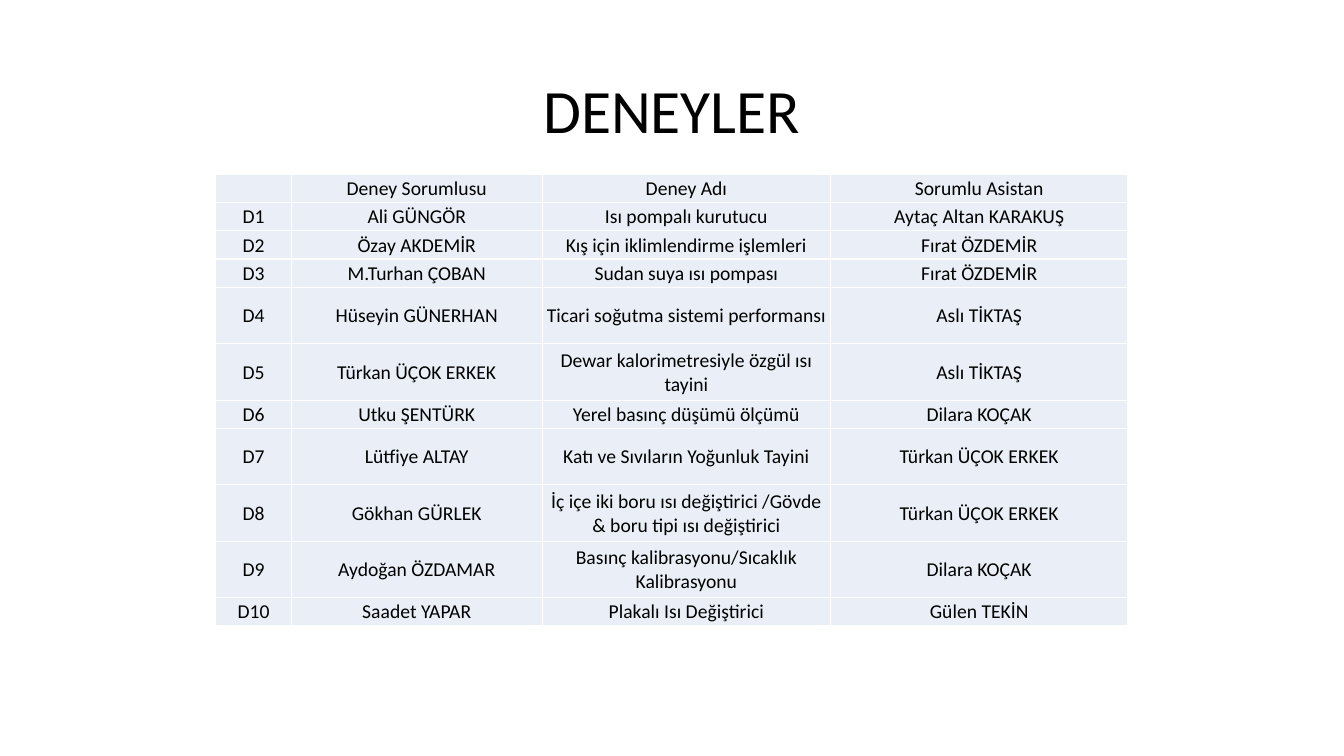
from lxml import etree
from pptx import Presentation
from pptx.dml.color import RGBColor
from pptx.enum.text import MSO_ANCHOR, PP_ALIGN
from pptx.oxml.ns import qn
from pptx.util import Pt

MIDDLE = MSO_ANCHOR.MIDDLE
CENTER = PP_ALIGN.CENTER
BLANK_LAYOUT = 6

THEME = {
    "font": "Calibri",
    "text": "000000",
    "cell": "EAEFF7",
    "border": "FFFFFF",
    "title_size": 44,
    "table_size": 14,
}

TABLE_LEFT, TABLE_TOP = 154.08, 124.56
COLUMN_WIDTHS = [54, 179.28, 205.92, 212.4]
LINE_HEIGHT = 20.16
CELL_FORMAT = {
    "margin_left": Pt(0.72),
    "margin_top": Pt(0.72),
    "margin_right": Pt(0.72),
    "margin_bottom": 0,
    "vertical_anchor": MIDDLE,
}

# Each row: height in lines, then the cell texts
EXPERIMENTS = [
    (1, "", "Deney Sorumlusu", "Deney Adı", "Sorumlu Asistan"),
    (1, "D1", "Ali GÜNGÖR", "Isı pompalı kurutucu", "Aytaç Altan KARAKUŞ"),
    (1, "D2", "Özay AKDEMİR", "Kış için iklimlendirme işlemleri", "Fırat ÖZDEMİR"),
    (1, "D3", "M.Turhan ÇOBAN", "Sudan suya ısı pompası", "Fırat ÖZDEMİR"),
    (2, "D4", "Hüseyin GÜNERHAN", "Ticari soğutma sistemi performansı", "Aslı TİKTAŞ"),
    (2, "D5", "Türkan ÜÇOK ERKEK", "Dewar kalorimetresiyle özgül ısı tayini", "Aslı TİKTAŞ"),
    (1, "D6", "Utku ŞENTÜRK", "Yerel basınç düşümü ölçümü", "Dilara KOÇAK"),
    (2, "D7", "Lütfiye ALTAY", "Katı ve Sıvıların Yoğunluk Tayini", "Türkan ÜÇOK ERKEK"),
    (2, "D8", "Gökhan GÜRLEK",
     "İç içe iki boru ısı değiştirici /Gövde & boru tipi ısı değiştirici", "Türkan ÜÇOK ERKEK"),
    (2, "D9", "Aydoğan ÖZDAMAR", "Basınç kalibrasyonu/Sıcaklık Kalibrasyonu", "Dilara KOÇAK"),
    (1, "D10", "Saadet YAPAR", "Plakalı Isı Değiştirici", "Gülen TEKİN"),
]


def write_centered(paragraph, text, size):
    paragraph.alignment = CENTER
    if not text:
        # An empty cell still needs a type size, or its row grows
        etree.SubElement(paragraph._p, qn("a:endParaRPr"), sz=str(size * 100))
        return
    run = paragraph.add_run()
    run.text = text
    run.font.name = THEME["font"]
    run.font.size = Pt(size)
    run.font.color.rgb = RGBColor.from_string(THEME["text"])


def add_borders(cell):
    properties = cell._tc.get_or_add_tcPr()
    for side in ("a:lnL", "a:lnR", "a:lnT", "a:lnB"):
        line = etree.SubElement(properties, qn(side), w=str(Pt(1)))
        fill = etree.SubElement(line, qn("a:solidFill"))
        etree.SubElement(fill, qn("a:srgbClr"), val=THEME["border"])


presentation = Presentation()
presentation.slide_width = Pt(960)
presentation.slide_height = Pt(540)
slide = presentation.slides.add_slide(presentation.slide_layouts[BLANK_LAYOUT])

title_frame = slide.shapes.add_textbox(Pt(66), Pt(28.8), Pt(828), Pt(104.4)).text_frame
title_frame.word_wrap = True
title_frame.vertical_anchor = MIDDLE
title = title_frame.paragraphs[0]
title.line_spacing = 0.9
write_centered(title, "DENEYLER", THEME["title_size"])

total_lines = sum(experiment[0] for experiment in EXPERIMENTS)
table = slide.shapes.add_table(
    len(EXPERIMENTS), len(COLUMN_WIDTHS), Pt(TABLE_LEFT), Pt(TABLE_TOP),
    Pt(sum(COLUMN_WIDTHS)), Pt(total_lines * LINE_HEIGHT)).table
table.first_row = False
table.horz_banding = False

for column, width in zip(table.columns, COLUMN_WIDTHS):
    column.width = Pt(width)

for row, (lines, *texts) in zip(table.rows, EXPERIMENTS):
    row.height = Pt(lines * LINE_HEIGHT)
    for cell, text in zip(row.cells, texts):
        for name, value in CELL_FORMAT.items():
            setattr(cell, name, value)
        add_borders(cell)
        cell.fill.solid()
        cell.fill.fore_color.rgb = RGBColor.from_string(THEME["cell"])
        write_centered(cell.text_frame.paragraphs[0], text, THEME["table_size"])

presentation.save("out.pptx")
